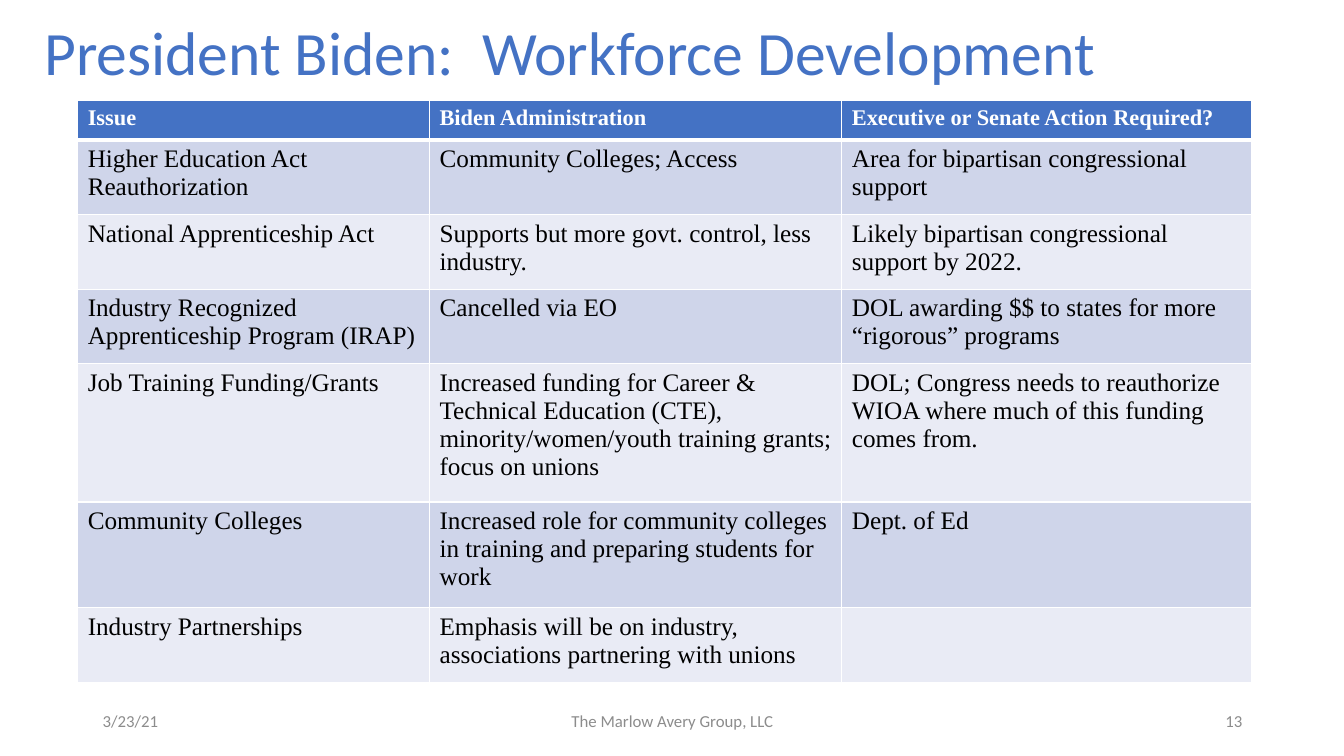
from pptx import Presentation, util as u
from pptx.dml import color
from pptx.enum import text
from pptx.oxml import parse_xml
from pptx.oxml import ns

COLORS = {"blue": "4472C4", "odd": "CFD5EA", "even": "E9EBF5",
          "white": "FFFFFF", "black": "000000", "gray": "8C8C8C"}
COLUMNS = [26.18, 30.68, 30.46]
TABLE = [
    (5.2, ["Issue", "Biden Administration", "Executive or Senate Action Required?"]),
    (9.87, ["Higher Education Act Reauthorization", "Community Colleges; Access",
            "Area for bipartisan congressional support"]),
    (9.87, ["National Apprenticeship Act", "Supports but more govt. control, less industry.",
            "Likely bipartisan congressional support by 2022."]),
    (9.87, ["Industry Recognized Apprenticeship Program (IRAP)", "Cancelled via EO",
            "DOL awarding $$ to states for more “rigorous” programs"]),
    (18.27, ["Job Training Funding/Grants",
             "Increased funding for Career & Technical Education (CTE), "
             "minority/women/youth training grants; focus on unions",
             "DOL; Congress needs to reauthorize WIOA where much of this funding comes from."]),
    (14, ["Community Colleges",
          "Increased role for community colleges in training and preparing students for work",
          "Dept. of Ed"]),
    (9.87, ["Industry Partnerships",
            "Emphasis will be on industry, associations partnering with unions", ""]),
]
ALIGN = text.PP_ALIGN
FOOTER = [
    (6.9, 22.5, "3/23/21", ALIGN.LEFT),
    (33.16, 33.75, "The Marlow Avery Group, LLC", ALIGN.CENTER),
    (70.67, 22.5, "13", ALIGN.RIGHT),
]


class SlideBuilder:
    """Draws styled elements on one page, with lengths in percent of its size."""

    def __init__(self, deck):
        self.deck = deck
        self.page = deck.slides.add_slide(deck.slide_layouts[5])
        self.heading_font, self.table_font = "Calibri", "Times New Roman"

    def across(self, share):
        return u.Emu(round(self.deck.slide_width * share / 100))

    def down(self, share):
        return u.Emu(round(self.deck.slide_height * share / 100))

    def frame(self, left, top, width, height):
        return self.across(left), self.down(top), self.across(width), self.down(height)

    def add_span(self, para, words, size, font, hue, bold=False):
        span = para.add_run()
        span.text = words
        span.font.size, span.font.name, span.font.bold = u.Pt(size), font, bold
        span.font.color.rgb = color.RGBColor.from_string(COLORS[hue])

    def title(self, words, *place):
        box = self.page.shapes.title
        box.left, box.top, box.width, box.height = self.frame(*place)
        box.text_frame.auto_size = text.MSO_AUTO_SIZE.NONE
        box.text_frame.vertical_anchor = text.MSO_ANCHOR.TOP
        para = box.text_frame.paragraphs[0]
        para.alignment, para.line_spacing = ALIGN.LEFT, 0.9
        self.add_span(para, words, 44, self.heading_font, "blue")

    def label(self, words, align, *place):
        box = self.page.shapes.add_textbox(*self.frame(*place))
        box.text_frame.word_wrap = True
        box.text_frame.vertical_anchor = text.MSO_ANCHOR.MIDDLE
        para = box.text_frame.paragraphs[0]
        para.alignment = align
        self.add_span(para, words, 12, self.heading_font, "gray")

    def borders(self, cell, top, bottom):
        properties = cell._tc.get_or_add_tcPr()
        widths = {"L": 1, "R": 1, "T": top, "B": bottom}
        for index, (side, points) in enumerate(widths.items()):
            properties.insert(index, parse_xml(
                f'<a:ln{side} {ns.nsdecls("a")} w="{u.Pt(points)}"><a:solidFill>'
                f'<a:srgbClr val="{COLORS["white"]}"/></a:solidFill></a:ln{side}>'))

    def table(self, rows, columns, left, top):
        place = self.frame(left, top, sum(columns), sum(height for height, _ in rows))
        grid = self.page.shapes.add_table(len(rows), len(columns), *place).table
        for column, width in zip(grid.columns, columns):
            column.width = self.across(width)
        for index, (height, entries) in enumerate(rows):
            grid.rows[index].height = self.down(height)
            header = index == 0
            fill = "blue" if header else "odd" if index % 2 else "even"
            for cell, words in zip(grid.rows[index].cells, entries):
                cell.fill.solid()
                cell.fill.fore_color.rgb = color.RGBColor.from_string(COLORS[fill])
                self.borders(cell, 3 if index == 1 else 1, 3 if header else 1)
                if words:
                    self.add_span(cell.text_frame.paragraphs[0], words, 16 if header else 18,
                                  self.table_font, "white" if header else "black", header)


def main():
    deck = Presentation()
    deck.slide_width, deck.slide_height = u.Inches(13.33), u.Inches(7.5)
    slide = SlideBuilder(deck)
    slide.table(TABLE, COLUMNS, 5.78, 13.33)
    slide.title("President Biden:  Workforce Development", 2.55, 2.27, 96.47, 12.13)
    for left, width, words, align in FOOTER:
        slide.label(words, align, left, 92.67, width, 5.33)
    deck.save("out.pptx")


if __name__ == "__main__":
    main()
